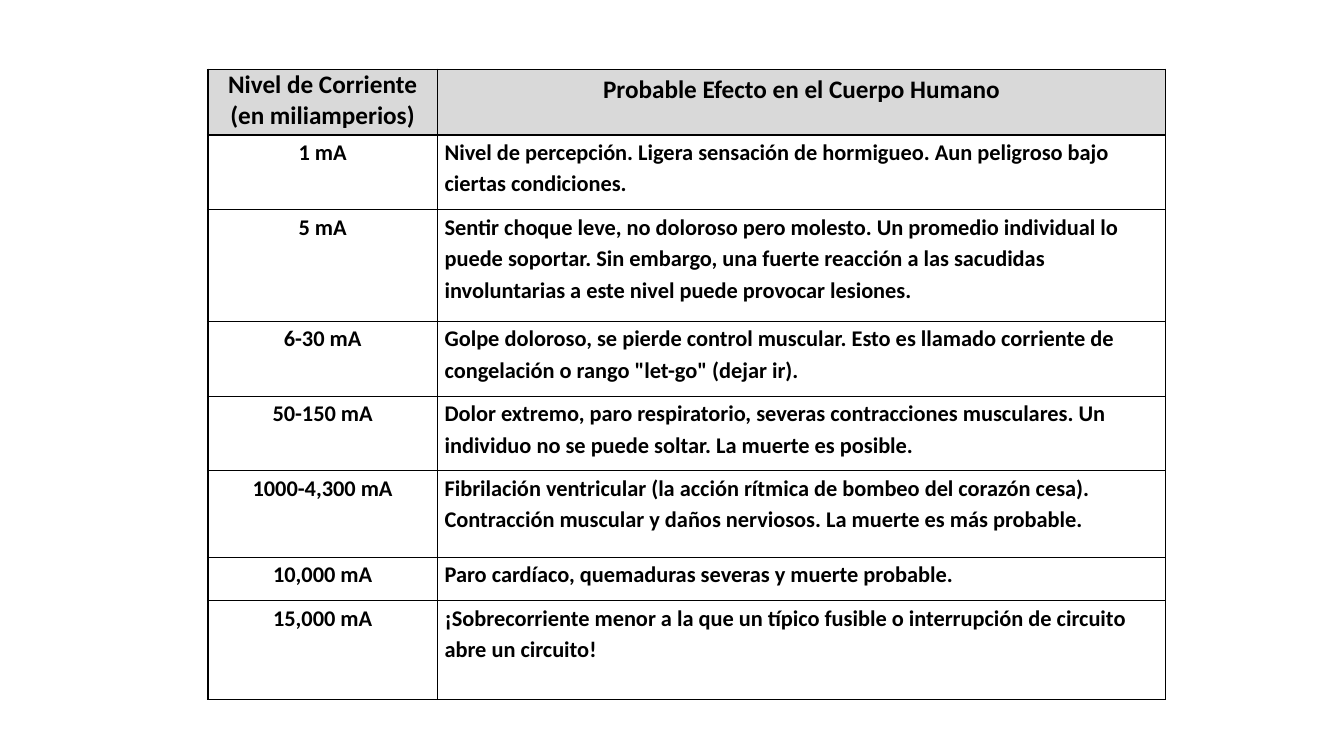
"""Build a slide with a table of the effects of electric current on the body."""
from dataclasses import dataclass

from lxml.etree import SubElement
from pptx import Presentation
from pptx.dml.color import RGBColor
from pptx.enum.text import PP_ALIGN
from pptx.oxml.ns import qn
from pptx.table import _Cell
from pptx.util import Inches, Pt

COLORS = {"ink": "000000", "head": "D9D9D9"}
FONT = "Calibri"
LEFT, TOP = 2.06, 0.69
WIDTHS = (2.28, 7.22)
THICK, THIN = 1.5, 1


@dataclass
class Level:
    """One table row: current, effect and row height in inches."""
    current: str
    effect: str
    height: float


LEVELS = [
    Level("Nivel de Corriente\n(en miliamperios)", "Probable Efecto en el Cuerpo Humano", 0.65),
    Level("1 mA", "Nivel de percepción. Ligera sensación de hormigueo. "
          "Aun peligroso bajo ciertas condiciones.", 0.74),
    Level("5 mA", "Sentir choque leve, no doloroso pero molesto. Un promedio individual "
          "lo puede soportar. Sin embargo, una fuerte reacción a las sacudidas "
          "involuntarias a este nivel puede provocar lesiones.", 1.11),
    Level("6-30 mA", "Golpe doloroso, se pierde control muscular. Esto es llamado "
          'corriente de congelación o rango "let-go" (dejar ir).', 0.74),
    Level("50-150 mA", "Dolor extremo, paro respiratorio, severas contracciones "
          "musculares. Un individuo no se puede soltar. La muerte es posible.", 0.74),
    Level("1000-4,300 mA", "Fibrilación ventricular (la acción rítmica de bombeo del corazón "
          "cesa). Contracción muscular y daños nerviosos. La muerte es más probable.", 0.86),
    Level("10,000 mA", "Paro cardíaco, quemaduras severas y muerte probable.", 0.43),
    Level("15,000 mA", "¡Sobrecorriente menor a la que un típico fusible o interrupción "
          "de circuito abre un circuito!", 0.98),
]


def write(cell: _Cell, text: str, *, size: float, align: PP_ALIGN, loose: bool) -> None:
    """Put bold text in a cell, one paragraph a line, with or without extra spacing."""
    cell.margin_left = cell.margin_right = Inches(0.07)
    cell.margin_top = cell.margin_bottom = 0
    cell.text_frame.text = text
    for para in cell.text_frame.paragraphs:
        para.alignment = align
        if loose:
            para.line_spacing = 1.15
            para.space_before = para.space_after = Pt(6)
        font = para.runs[0].font
        font.name, font.size, font.bold = FONT, Pt(size), True
        font.color.rgb = RGBColor.from_string(COLORS["ink"])


def border(cell: _Cell, sides: dict[str, float]) -> None:
    """Draw solid cell borders, given a width in points for each side."""
    props = cell._tc.get_or_add_tcPr()
    for side, width in sides.items():
        line = SubElement(props, qn(f"a:ln{side}"), w=str(int(Pt(width))))
        fill = SubElement(line, qn("a:solidFill"))
        SubElement(fill, qn("a:srgbClr"), val=COLORS["ink"])


def paint(cell: _Cell, color: str | None) -> None:
    """Fill a cell with a colour, or leave it clear."""
    if color is None:
        cell.fill.background()
    else:
        cell.fill.solid()
        cell.fill.fore_color.rgb = RGBColor.from_string(color)


def main() -> None:
    """Create the slide and save it."""
    deck = Presentation()
    deck.slide_width, deck.slide_height = Inches(13.33), Inches(7.5)
    slide = deck.slides.add_slide(deck.slide_layouts[6])
    total = sum(level.height for level in LEVELS)
    table = slide.shapes.add_table(
        len(LEVELS), len(WIDTHS), Inches(LEFT), Inches(TOP),
        Inches(sum(WIDTHS)), Inches(total)).table
    for col, width in zip(table.columns, WIDTHS):
        col.width = Inches(width)
    last = len(LEVELS) - 1
    for row, level in enumerate(LEVELS):
        table.rows[row].height = Inches(level.height)
        head = row == 0
        for col, text in enumerate((level.current, level.effect)):
            cell = table.cell(row, col)
            first = col == 0
            write(cell, text, size=18 if head else 16, loose=not (head and first),
                  align=PP_ALIGN.CENTER if head or first else PP_ALIGN.LEFT)
            border(cell, {"L": THICK if first else THIN, "R": THIN if first else THICK,
                          "T": THICK if head else THIN, "B": THICK if row == last else THIN})
            paint(cell, COLORS["head"] if head else None)
    deck.save("out.pptx")


if __name__ == "__main__":
    main()
